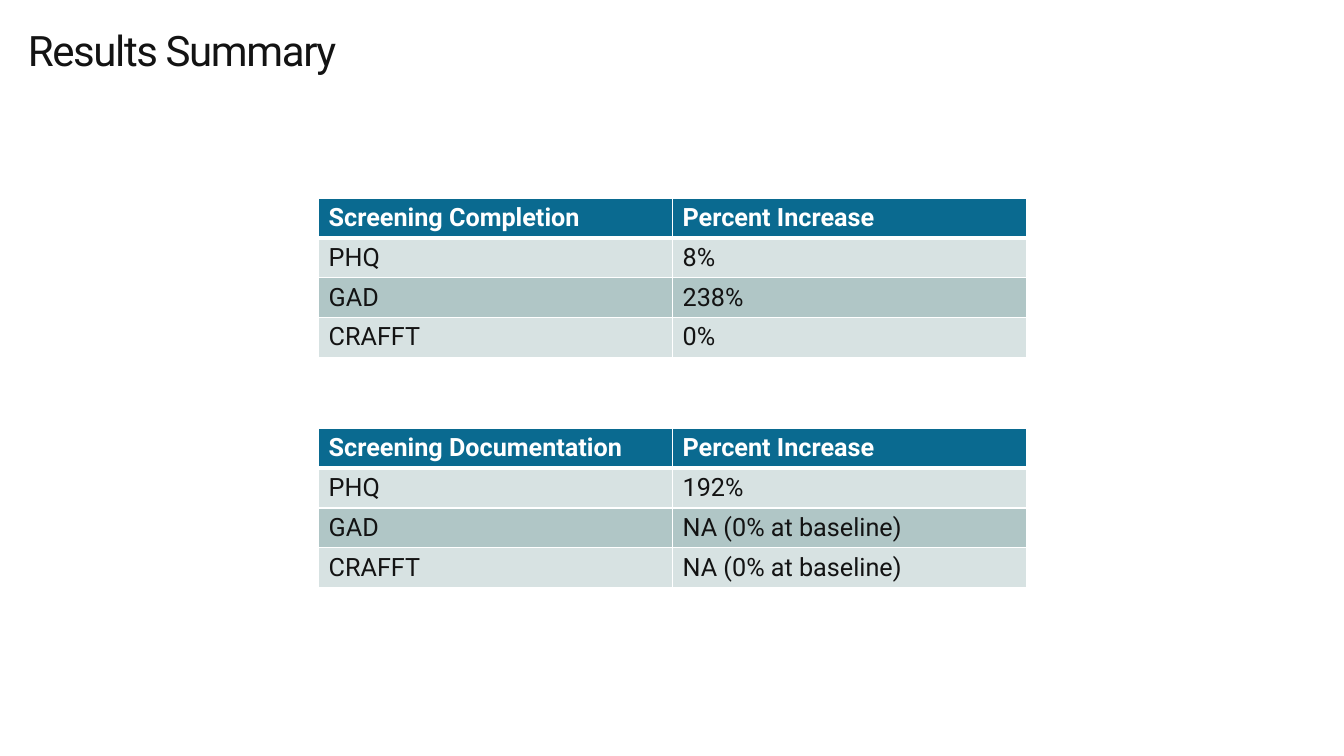
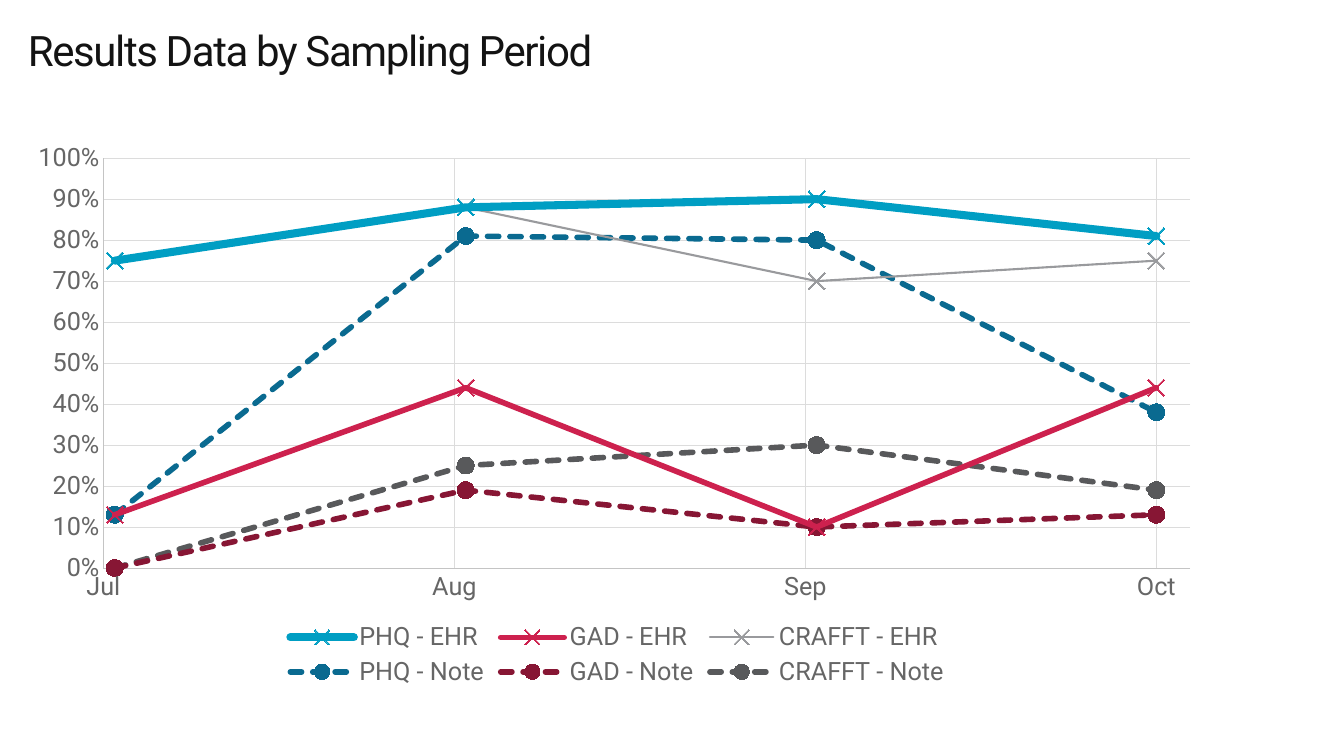
from lxml import etree
from pptx import Presentation
from pptx import util as u
from pptx.chart import data as cd
from pptx.dml import color
from pptx.enum import chart as ec, dml, text
from pptx.oxml import ns, parse_xml

FONT = "Roboto"
INK, WHITE, BLUE, GREY = "131313", "FFFFFF", "0A6A90", "666666"
BANDS = ["D7E2E2", "B0C6C6"]

TITLES = ["Results Summary", "Results Data by Sampling Period"]
TABLES = [
    [("Screening Completion", "Percent Increase"),
     ("PHQ", "8%"), ("GAD", "238%"), ("CRAFFT", "0%")],
    [("Screening Documentation", "Percent Increase"),
     ("PHQ", "192%"), ("GAD", "NA (0% at baseline)"),
     ("CRAFFT", "NA (0% at baseline)")],
]
DAYS = [45840, 45871, 45902, 45932]
LINES = [
    ("PHQ - EHR", [0.75, 0.88, 0.9, 0.81], "009EC3", 5.75),
    ("GAD - EHR", [0.13, 0.44, 0.1, 0.44], "CD214E", 4),
    ("CRAFFT - EHR", [0.75, 0.88, 0.7, 0.75], "999A9D", 1.5),
    ("PHQ - Note", [0.13, 0.81, 0.8, 0.38], BLUE, 4),
    ("GAD - Note", [0, 0.19, 0.1, 0.13], "871634", 4),
    ("CRAFFT - Note", [0, 0.25, 0.3, 0.19], "58595B", 4),
]
PLOT = {"x": 0.07, "y": 0.05, "w": 0.91, "h": 0.73}


def rgb(code):
    return color.RGBColor.from_string(code)


def style(font, size=18, ink=INK, bold=False):
    font.name, font.size, font.bold = FONT, u.Pt(size), bold
    font.color.rgb = rgb(ink)


def write(frame, words, space=None, track=None, **look):
    par = frame.paragraphs[0]
    par.line_spacing = space
    run = par.add_run()
    run.text = words
    style(run.font, **look)
    if track:
        run.font._element.set("spc", str(track))


def stroke(line, ink, width):
    line.color.rgb = rgb(ink)
    line.width = u.Pt(width)


def border(cell, **widths):
    props = cell._tc.get_or_add_tcPr()
    for side in "LRTB":
        width = u.Pt(widths.get(side, 1))
        props.append(parse_xml(
            f'<a:ln{side} {ns.nsdecls("a")} w="{width}"><a:solidFill>'
            f'<a:srgbClr val="{WHITE}"/></a:solidFill></a:ln{side}>'))


def add_page(deck, title):
    page = deck.slides.add_slide(deck.slide_layouts[5])
    write(page.shapes.title.text_frame, title, size=30, space=0.85, track=-100)
    page.shapes.title.text_frame.paragraphs[0].alignment = text.PP_ALIGN.LEFT
    return page


def add_grid(page, rows, top):
    high, wide = u.Cm(1), u.Cm(8.92)
    grid = page.shapes.add_table(
        len(rows), 2, u.Cm(8.03), top, wide * 2, high * len(rows)).table
    grid.horz_banding = False
    for r, row in enumerate(rows):
        grid.rows[r].height = high
        head = r == 0
        for c, words in enumerate(row):
            cell = grid.cell(r, c)
            write(cell.text_frame, words, ink=WHITE if head else INK, bold=head)
            border(cell, B=3 if head else 1, T=3 if r == 1 else 1)
            cell.fill.solid()
            cell.fill.fore_color.rgb = rgb(BLUE if head else BANDS[(r - 1) % 2])


def set_axis(axis, low, high, step, form):
    axis.minimum_scale, axis.maximum_scale = low, high
    axis.major_unit = step
    axis.major_tick_mark = axis.minor_tick_mark = ec.XL_TICK_MARK.NONE
    axis.has_major_gridlines = True
    stroke(axis.major_gridlines.format.line, "DCDCDC", 0.75)
    stroke(axis.format.line, "C4C4C4", 0.75)
    axis.tick_labels.number_format = form
    axis.tick_labels.number_format_is_linked = False
    style(axis.tick_labels.font, ink=GREY)


def set_plot(chart):
    area = chart._chartSpace.chart.plotArea
    for old in area.findall(ns.qn("c:layout")):
        area.remove(old)
    layout = etree.Element(ns.qn("c:layout"))
    area.insert(0, layout)
    box = etree.SubElement(layout, ns.qn("c:manualLayout"))
    parts = {"layoutTarget": "inner", "xMode": "edge", "yMode": "edge", **PLOT}
    for tag, val in parts.items():
        etree.SubElement(box, ns.qn("c:" + tag)).set("val", str(val))


def set_line(line, ink, width, note):
    line.smooth = False
    stroke(line.format.line, ink, width)
    line.format.line._ln.set("cap", "rnd")
    mark = line.marker
    mark.size = 12
    kinds = ec.XL_MARKER_STYLE
    mark.style = kinds.CIRCLE if note else kinds.X
    stroke(mark.format.line, ink, 0.75)
    if note:
        line.format.line.dash_style = dml.MSO_LINE.SQUARE_DOT
        mark.format.fill.solid()
        mark.format.fill.fore_color.rgb = rgb(ink)
    else:
        mark.format.fill.background()


def add_graph(page):
    data = cd.XyChartData(number_format="0%")
    for name, vals, _, _ in LINES:
        line = data.add_series(name)
        for day, val in zip(DAYS, vals):
            line.add_data_point(day, val)
    chart = page.shapes.add_chart(
        ec.XL_CHART_TYPE.XY_SCATTER_LINES, u.Cm(0.5), u.Cm(3.28),
        u.Cm(30.1), u.Cm(14.15), data).chart
    style(chart.font, size=10)
    chart.has_title = False
    chart.has_legend = True
    chart.legend.position = ec.XL_LEGEND_POSITION.BOTTOM
    chart.legend.include_in_layout = False
    style(chart.legend.font, ink=GREY)
    set_axis(chart.category_axis, 45839, 45935, 31, "[$-409]mmm")
    set_axis(chart.value_axis, 0, 1, 0.1, "0%")
    set_plot(chart)
    plot = chart.plots[0]
    plot.vary_by_categories = False
    for line, (name, _, ink, width) in zip(plot.series, LINES):
        set_line(line, ink, width, name.endswith("Note"))


def set_title(deck):
    shape = deck.slide_layouts[5].placeholders[0]
    shape.left, shape.top = u.Cm(0.5), u.Cm(0.6)
    shape.width, shape.height = u.Cm(30.1), u.Cm(2.7)
    frame = shape.text_frame
    frame.margin_left = frame.margin_top = u.Cm(0.2)
    frame.vertical_anchor = text.MSO_ANCHOR.TOP
    frame.auto_size = text.MSO_AUTO_SIZE.NONE


def main():
    deck = Presentation()
    deck.slide_width, deck.slide_height = u.Cm(33.87), u.Cm(19.05)
    set_title(deck)
    first, second = [add_page(deck, title) for title in TITLES]
    for i, rows in enumerate(TABLES):
        add_grid(first, rows, u.Cm(5 + 5.8 * i))
    add_graph(second)
    deck.save("out.pptx")


if __name__ == "__main__":
    main()
